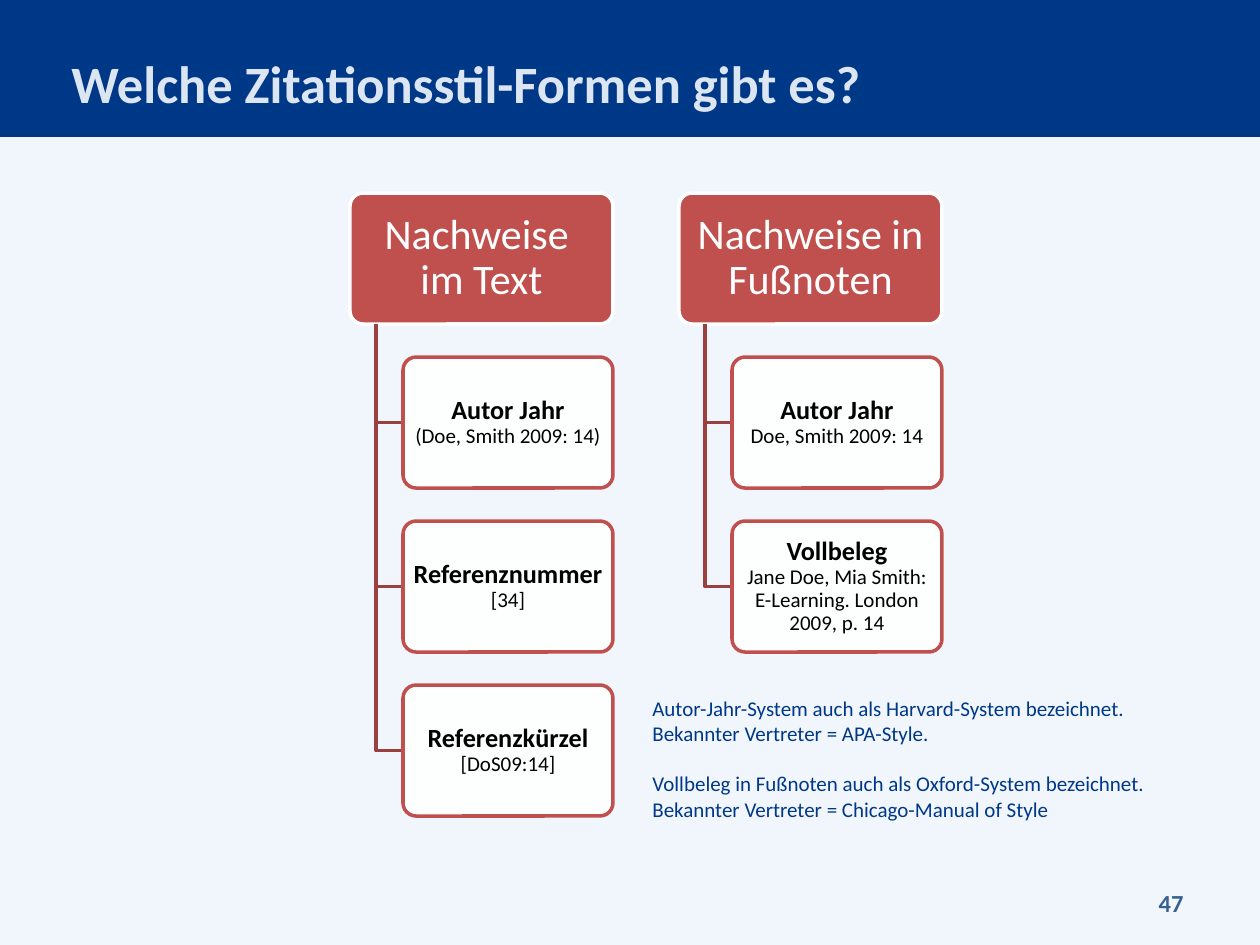
import pptx
import pptx.util
import pptx.dml.color
import pptx.enum.shapes
import pptx.enum.text
import lxml.etree

TITLE = "Welche Zitationsstil-Formen gibt es?"
PAGE_NUMBER = "47"
BRANCHES = [
    (["Nachweise ", "im Text"], [
        ("Autor Jahr", "(Doe, Smith 2009: 14)"),
        ("Referenznummer", "[34]"),
        ("Referenzkürzel", "[DoS09:14]"),
    ]),
    (["Nachweise in Fußnoten"], [
        ("Autor Jahr", "Doe, Smith 2009: 14"),
        ("Vollbeleg", "Jane Doe, Mia Smith: E-Learning. London 2009, p. 14"),
    ]),
]
NOTES = [
    "Autor-Jahr-System auch als Harvard-System bezeichnet. Bekannter Vertreter = APA-Style.",
    "Vollbeleg in Fußnoten auch als Oxford-System bezeichnet. Bekannter Vertreter = Chicago-Manual of Style",
]
COLORS = {
    "background": "F1F6FC", "band": "003888", "title": "DCE6F2", "number": "376092",
    "accent": "C0504D", "branch": "9A403E", "white": "FFFFFF", "black": "000000",
}
FONT = "Calibri"
SCALE = 914400 / 126
LEFT, TOP = 350, 193
COLUMN_STEP, ROW_STEP = 329, 164
HEAD_WIDTH, CARD_WIDTH, CARD_HEIGHT = 263, 210, 131
CARD_INDENT, STEM_INDENT = 53, 26
ALIGN = pptx.enum.text.PP_ALIGN
ANCHOR = pptx.enum.text.MSO_ANCHOR
SHAPE = pptx.enum.shapes.MSO_SHAPE


def emu(px):
    return round(px * SCALE)


def color(name):
    return pptx.dml.color.RGBColor.from_string(COLORS[name])


def add_span(para, text, size, tone, bold=False):
    span = para.add_run()
    span.text = text
    span.font.name = FONT
    span.font.size = pptx.util.Pt(size)
    span.font.bold = bold
    span.font.color.rgb = color(tone)


def add_box(page, area, anchor):
    frame = page.shapes.add_textbox(*map(emu, area)).text_frame
    frame.word_wrap = True
    frame.vertical_anchor = anchor
    return frame


def add_panel(page, kind, area, fill, line=None, alpha=100):
    panel = page.shapes.add_shape(kind, *map(emu, area))
    panel.shadow.inherit = False
    panel.fill.solid()
    panel.fill.fore_color.rgb = color(fill)
    if alpha < 100:
        tone = panel.fill._xPr.find(".//" + pptx.oxml.ns.qn("a:srgbClr"))
        lxml.etree.SubElement(tone, pptx.oxml.ns.qn("a:alpha"), val=str(alpha * 1000))
    if line:
        panel.line.color.rgb = color(line)
        panel.line.width = pptx.util.Pt(2)
    else:
        panel.line.fill.background()
    return panel


def add_card(page, area, fill, line, inset, lines, alpha=100):
    card = add_panel(page, SHAPE.ROUNDED_RECTANGLE, area, fill, line, alpha)
    card.adjustments[0] = 0.1
    frame = card.text_frame
    frame.word_wrap = True
    frame.vertical_anchor = ANCHOR.MIDDLE
    frame.margin_left = frame.margin_right = emu(inset[0])
    frame.margin_top = frame.margin_bottom = emu(inset[1])
    para = frame.paragraphs[0]
    para.alignment = ALIGN.CENTER
    para.line_spacing = 0.9
    for index, style in enumerate(lines):
        if index:
            para.add_line_break()
        add_span(para, *style)


def add_branch(page, x, y, end_x, end_y):
    builder = page.shapes.build_freeform(emu(x), emu(y))
    builder.add_line_segments([(emu(x), emu(end_y)), (emu(end_x), emu(end_y))], close=False)
    branch = builder.convert_to_shape()
    branch.shadow.inherit = False
    branch.fill.background()
    branch.line.color.rgb = color("branch")
    branch.line.width = pptx.util.Pt(2)


def add_tree(page, left, heading, cards):
    add_card(page, (left, TOP, HEAD_WIDTH, CARD_HEIGHT), "accent", "white", (6, 4),
             [(text, 24, "white") for text in heading])
    card_left = left + CARD_INDENT
    for row, (name, example) in enumerate(cards, start=1):
        top = TOP + row * ROW_STEP
        add_branch(page, left + STEM_INDENT, TOP + CARD_HEIGHT, card_left, top + CARD_HEIGHT / 2)
        add_card(page, (card_left, top, CARD_WIDTH, CARD_HEIGHT), "white", "accent", (4, 3),
                 [(name, 15, "black", True), (example, 12, "black")], alpha=90)


def main():
    deck = pptx.Presentation()
    deck.slide_width, deck.slide_height = emu(1260), emu(945)
    page = deck.slides.add_slide(deck.slide_layouts[6])
    page.background.fill.solid()
    page.background.fill.fore_color.rgb = color("background")

    add_panel(page, SHAPE.RECTANGLE, (0, 0, 1260, 137), "band")
    title = add_box(page, (59, 39, 1134, 88), ANCHOR.MIDDLE)
    add_span(title.paragraphs[0], TITLE, 30, "title", True)

    for column, (heading, cards) in enumerate(BRANCHES):
        add_tree(page, LEFT + column * COLUMN_STEP, heading, cards)

    notes = add_box(page, (640, 689, 566, 147), ANCHOR.TOP)
    for index, text in enumerate(NOTES):
        para = notes.add_paragraph() if index else notes.paragraphs[0]
        if index:
            para.space_before = pptx.util.Pt(14.5)
        add_span(para, text, 12, "band")

    number = add_box(page, (1073, 874, 123, 50), ANCHOR.BOTTOM)
    number.paragraphs[0].alignment = ALIGN.RIGHT
    add_span(number.paragraphs[0], PAGE_NUMBER, 14, "number", True)
    deck.save("out.pptx")


if __name__ == "__main__":
    main()
